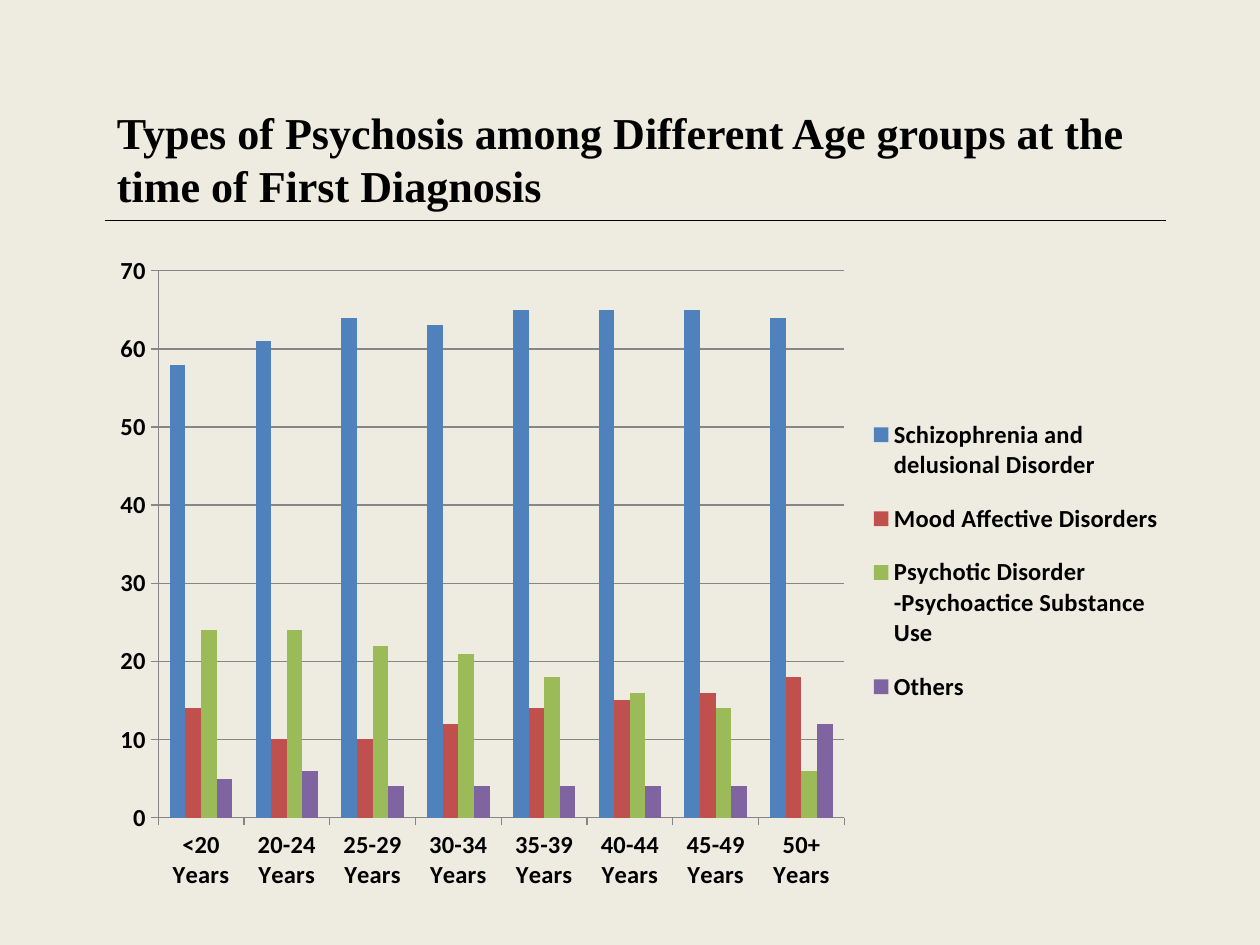
"""Build a slide with a column chart of psychosis types by age group."""
from pptx import Presentation
from pptx.chart.data import CategoryChartData
from pptx.dml.color import RGBColor
from pptx.enum.chart import XL_CHART_TYPE, XL_LEGEND_POSITION, XL_TICK_MARK
from pptx.enum.shapes import MSO_CONNECTOR
from pptx.enum.text import MSO_ANCHOR
from pptx.oxml import parse_xml
from pptx.oxml.ns import nsdecls, qn
from pptx.util import Inches, Pt

COLUMN = XL_CHART_TYPE.COLUMN_CLUSTERED
RIGHT = XL_LEGEND_POSITION.RIGHT
OUTSIDE = XL_TICK_MARK.OUTSIDE
STRAIGHT = MSO_CONNECTOR.STRAIGHT
MIDDLE = MSO_ANCHOR.MIDDLE

CREAM = RGBColor(0xEE, 0xEC, 0xE1)
BLACK = RGBColor(0, 0, 0)
GRAY = RGBColor(0x86, 0x86, 0x86)
BLUE = RGBColor(0x4F, 0x81, 0xBD)
RED = RGBColor(0xC0, 0x50, 0x4D)
GREEN = RGBColor(0x9B, 0xBB, 0x59)
PURPLE = RGBColor(0x80, 0x64, 0xA2)

AGES = ["<20", "20-24", "25-29", "30-34", "35-39", "40-44", "45-49", "50+"]
SERIES = [
    ("Schizophrenia and delusional Disorder", BLUE, [58, 61, 64, 63, 65, 65, 65, 64]),
    ("Mood Affective Disorders", RED, [14, 10, 10, 12, 14, 15, 16, 18]),
    ("Psychotic Disorder -Psychoactice Substance Use", GREEN, [24, 24, 22, 21, 18, 16, 14, 6]),
    ("Others", PURPLE, [5, 6, 4, 4, 4, 4, 4, 12]),
]


def manual_layout(target, x, y, w, h):
    tags = f'<c:x val="{x}"/><c:y val="{y}"/><c:w val="{w}"/><c:h val="{h}"/>'
    return parse_xml(
        f'<c:layout {nsdecls("c")}><c:manualLayout>{target}'
        f'<c:xMode val="edge"/><c:yMode val="edge"/>{tags}</c:manualLayout></c:layout>'
    )


prs = Presentation()
prs.slide_width, prs.slide_height = Inches(10), Inches(7.5)
s = prs.slides.add_slide(prs.slide_layouts[6])
s.background.fill.solid()
s.background.fill.fore_color.rgb = CREAM

line = s.shapes.add_connector(STRAIGHT, Inches(0.83), Inches(1.75), Inches(9.25), Inches(1.75))
line.line.color.rgb = BLACK
line.line.width = Pt(0.75)
line._element.spPr.append(parse_xml(f'<a:effectLst {nsdecls("a")}/>'))

tf = s.shapes.add_textbox(Inches(0.83), Inches(0.76), Inches(8.5), Inches(1)).text_frame
tf.word_wrap = True
tf.vertical_anchor = MIDDLE
p = tf.paragraphs[0]
p.text = "Types of Psychosis among Different Age groups at the time of First Diagnosis"
p.font.name = "Times New Roman"
p.font.size = Pt(25.2)
p.font.bold = True
p.font.color.rgb = BLACK

data = CategoryChartData()
data.categories = [f"{age} Years" for age in AGES]
for name, color, values in SERIES:
    data.add_series(name, values)
chart = s.shapes.add_chart(
    COLUMN, Inches(0.83), Inches(1.94), Inches(8.51), Inches(5.23), data
).chart
chart.has_title = False
chart.font.name = "Calibri"
chart.font.size = Pt(14)
chart.font.bold = True
chart.font.color.rgb = BLACK

plot = chart.plots[0]
plot.gap_width = 150
plot.overlap = 0
plot.vary_by_categories = False
for series, (name, color, values) in zip(plot.series, SERIES):
    series.format.fill.solid()
    series.format.fill.fore_color.rgb = color

for axis in (chart.category_axis, chart.value_axis):
    axis.major_tick_mark = OUTSIDE
    axis.format.line.color.rgb = GRAY
chart.value_axis.minimum_scale = 0
chart.value_axis.maximum_scale = 70
chart.value_axis.major_unit = 10
chart.value_axis.has_major_gridlines = True
chart.value_axis.major_gridlines.format.line.color.rgb = GRAY

chart.has_legend = True
legend = chart.legend
legend.position = RIGHT
legend.include_in_layout = False
legend._element.find(qn("c:legendPos")).addnext(manual_layout("", 0.71, 0.23, 0.28, 0.5))

area = chart._chartSpace.chart.plotArea
for layout in area.findall(qn("c:layout")):
    area.remove(layout)
area.insert(0, manual_layout('<c:layoutTarget val="inner"/>', 0.05, 0.04, 0.64, 0.83))

prs.save("out.pptx")
